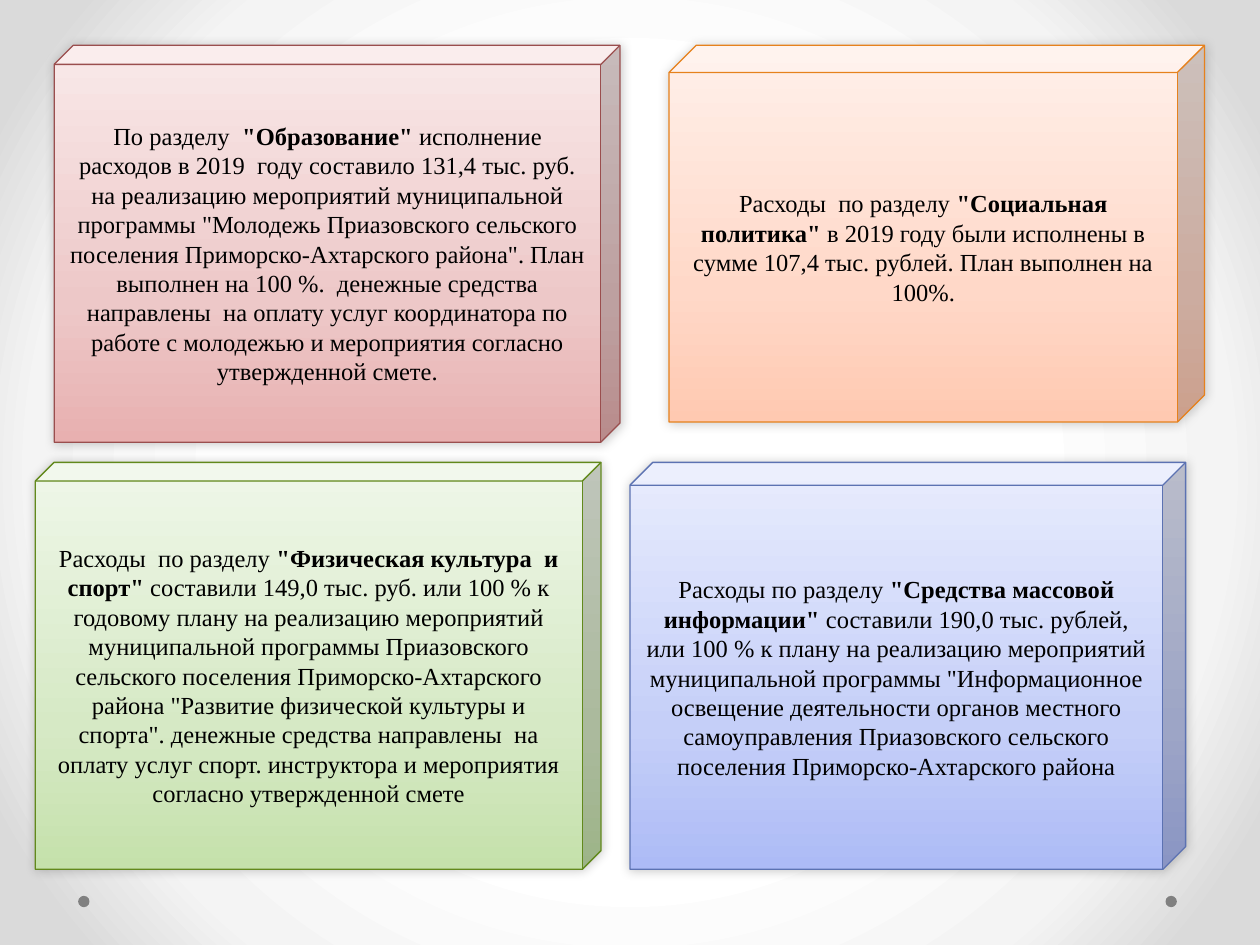
import pptx
import pptx.dml.color
import pptx.enum.shapes
import pptx.enum.text
import pptx.oxml
import pptx.oxml.ns
import pptx.util
from dataclasses import dataclass


@dataclass(frozen=True)
class Theme:
    font: str = "Times New Roman"
    text_size: int = 14
    text: str = "000000"
    dot: str = "808080"
    shadow: str = "000000"
    line_width: float = 0.75
    background: tuple = ((50, "FFFFFF"), (76, "F4F4F4"), (92, "DADADA"))
    # Each box palette: outline, then gradient from bottom to top
    red: tuple = ("9A4E4E", "E8B0B0", "EDC8C8", "F9E9E9")
    orange: tuple = ("E6811C", "FFC9B1", "FFD8C8", "FFF0EA")
    green: tuple = ("62891C", "C5E1AB", "D6E9C5", "EFF7E9")
    blue: tuple = ("5C72B2", "ADBBF6", "C5CFF8", "E8ECFD")


def rgb(value):
    return pptx.dml.color.RGBColor.from_string(value)


def xml(tag, body):
    return pptx.oxml.parse_xml(f"<a:{tag} {pptx.oxml.ns.nsdecls('a')}>{body}</a:{tag}>")


class BudgetSlide:
    """Slide on a grid of 100 columns by 75 rows."""

    COLUMNS, ROWS = 100, 75

    def __init__(self, deck, theme):
        self.theme = theme
        self.column = deck.slide_width / self.COLUMNS
        self.row = deck.slide_height / self.ROWS
        self.slide = deck.slides.add_slide(deck.slide_layouts[6])

    def place(self, preset, left, top, width, height):
        return self.slide.shapes.add_shape(
            preset, round(left * self.column), round(top * self.row),
            round(width * self.column), round(height * self.row))

    def gradient(self, fill, parent, stops, direction):
        fill.gradient()
        current = next(parent.iter(pptx.oxml.ns.qn("a:gradFill")))
        stop_xml = "".join(
            f'<a:gs pos="{position * 1000}"><a:srgbClr val="{color}"/></a:gs>'
            for position, color in stops)
        current.getparent().replace(
            current, xml("gradFill", f"<a:gsLst>{stop_xml}</a:gsLst>{direction}"))

    def background(self):
        center = '<a:fillToRect l="50000" t="50000" r="50000" b="50000"/>'
        self.gradient(self.slide.background.fill, self.slide.element,
                      self.theme.background, f'<a:path path="circle">{center}</a:path>')

    def dot(self, left, top, size=0.9):
        dot = self.place(pptx.enum.shapes.MSO_SHAPE.OVAL, left, top, size, size)
        dot.shadow.inherit = False
        dot.fill.solid()
        dot.fill.fore_color.rgb = rgb(self.theme.dot)
        dot.line.fill.background()

    def cube(self, area, depth, palette, lead, section, details):
        cube = self.place(pptx.enum.shapes.MSO_SHAPE.CUBE, *area)
        cube.adjustments[0] = depth
        outline, *shades = palette
        properties = cube.element.spPr
        self.gradient(cube.fill, properties, zip((0, 35, 100), shades),
                      '<a:lin ang="16200000" scaled="1"/>')
        cube.line.color.rgb = rgb(outline)
        cube.line.width = pptx.util.Pt(self.theme.line_width)
        self.soft_shadow(cube)

        frame = cube.text_frame
        frame.word_wrap = True
        frame.vertical_anchor = pptx.enum.text.MSO_ANCHOR.MIDDLE
        paragraph = frame.paragraphs[0]
        paragraph.alignment = pptx.enum.text.PP_ALIGN.CENTER
        for wording, bold in ((lead, False), (section, True), (details, False)):
            run = paragraph.add_run()
            run.text = wording
            run.font.name = self.theme.font
            run.font.size = pptx.util.Pt(self.theme.text_size)
            run.font.bold = bold
            run.font.color.rgb = rgb(self.theme.text)

    def soft_shadow(self, shape):
        shape.shadow.inherit = False
        effects = shape.element.spPr.find(pptx.oxml.ns.qn("a:effectLst"))
        shadow = xml("outerShdw", f'<a:srgbClr val="{self.theme.shadow}">'
                     '<a:alpha val="20000"/></a:srgbClr>')
        for name, value in (("blurRad", pptx.util.Pt(6)), ("dist", 0),
                            ("dir", 315 * 60000), ("rotWithShape", 0)):
            shadow.set(name, str(int(value)))
        effects.append(shadow)


def main():
    deck = pptx.Presentation()
    deck.slide_width = pptx.util.Inches(10)
    deck.slide_height = pptx.util.Inches(7.5)
    theme = Theme()
    page = BudgetSlide(deck, theme)

    # Backdrop and footer dots
    page.background()
    for left in (92.5, 6.2):
        page.dot(left, 71.1)

    # Budget sections: area, cube depth, palette, lead, section name, details
    upper, lower = 3.6, 36.7
    sections = (
        ((4.3, upper, 44.9, 31.5), 0.048, theme.red,
         "По разделу  ", '"Образование"',
         " исполнение расходов в 2019  году составило 131,4 тыс. руб. на реализацию "
         'мероприятий муниципальной программы "Молодежь Приазовского сельского '
         'поселения Приморско-Ахтарского района". План выполнен на 100 %.  денежные '
         "средства направлены  на оплату услуг координатора по работе с молодежью и "
         "мероприятия согласно утвержденной смете."),
        ((53.1, upper, 42.5, 29.9), 0.072, theme.orange,
         "Расходы  по разделу ", '"Социальная политика"',
         " в 2019 году были исполнены в сумме 107,4 тыс. рублей. "
         "План выполнен на 100%."),
        ((2.8, lower, 44.9, 32.3), 0.046, theme.green,
         "Расходы  по разделу ", '"Физическая культура  и спорт"',
         " составили 149,0 тыс. руб. или 100 % к годовому плану на реализацию "
         "мероприятий муниципальной программы Приазовского сельского поселения "
         'Приморско-Ахтарского района "Развитие физической культуры и спорта". '
         "денежные средства направлены  на оплату услуг спорт. инструктора и "
         "мероприятия согласно утвержденной смете"),
        ((50, lower, 44.1, 32.3), 0.056, theme.blue,
         "Расходы по разделу ", '"Средства массовой информации" ',
         "составили 190,0 тыс. рублей, или 100 % к плану на реализацию мероприятий "
         'муниципальной программы "Информационное освещение деятельности органов '
         "местного самоуправления Приазовского сельского поселения "
         "Приморско-Ахтарского района"),
    )
    for section in sections:
        page.cube(*section)

    deck.save("out.pptx")


if __name__ == "__main__":
    main()
